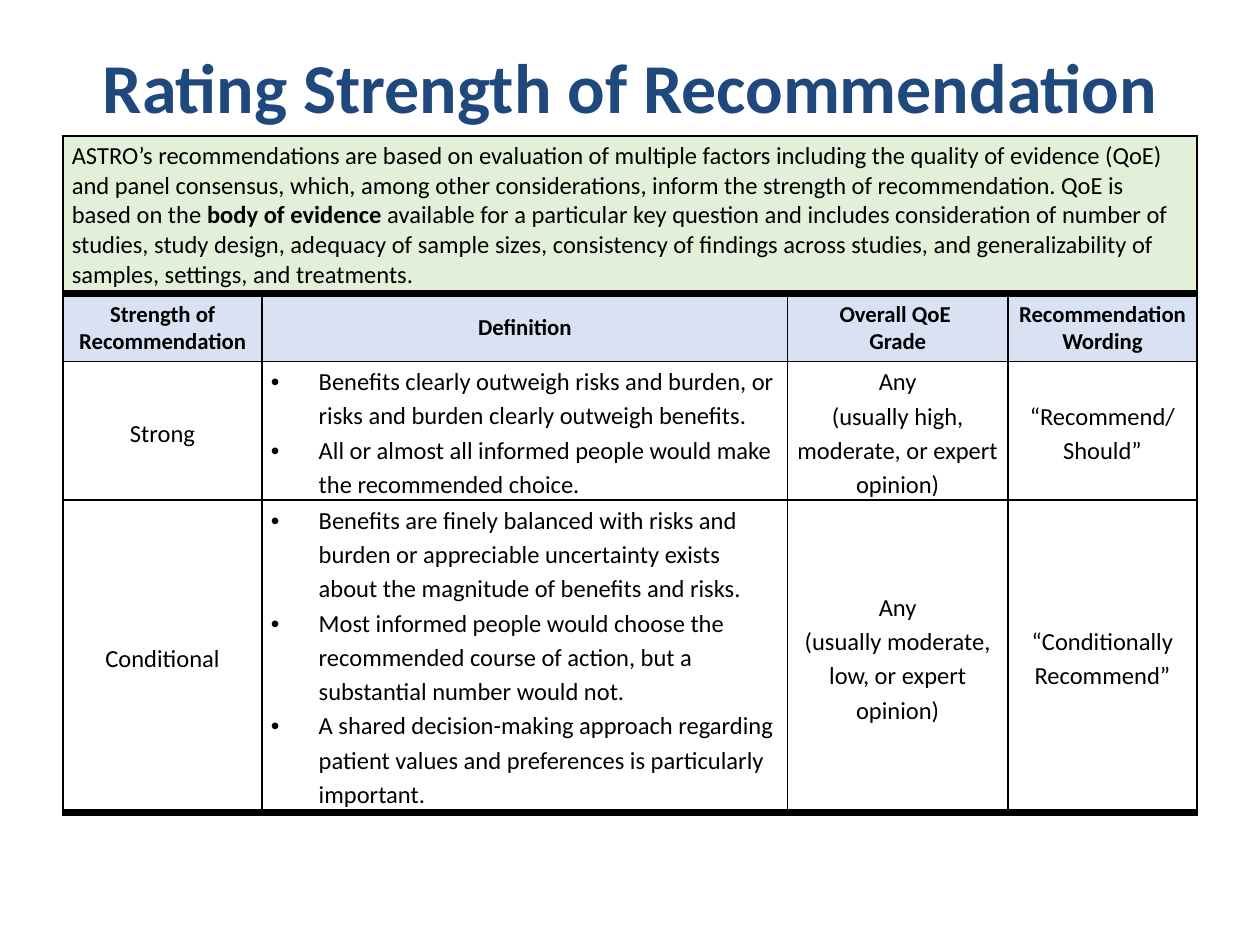
from lxml.etree import SubElement
from pptx import Presentation
from pptx.dml.color import RGBColor
from pptx.enum.text import MSO_ANCHOR, PP_ALIGN
from pptx.oxml import parse_xml
from pptx.oxml.ns import nsdecls, qn
from pptx.util import Emu, Inches, Pt

FONT = "Calibri"
BLACK, NAVY, GREEN, BLUE = "000000", "1F497D", "E2EFD9", "D9E2F3"
THIN, THICK = 1, 4.5

COLUMN_WIDTHS = [1.58, 4.17, 1.75, 1.5]
ROW_HEIGHTS = [1.25, 0.54, 1.1, 2.48]
RULE_WIDTHS = [THIN, THICK, THIN, THIN, THICK]

INTRO = (
    "ASTRO’s recommendations are based on evaluation of multiple factors including the "
    "quality of evidence (QoE) and panel consensus, which, among other considerations, "
    "inform the strength of recommendation. QoE is based on the **body of evidence** "
    "available for a particular key question and includes consideration of number of "
    "studies, study design, adequacy of sample sizes, consistency of findings across "
    "studies, and generalizability of samples, settings, and treatments."
)
HEADINGS = [
    ["Strength of Recommendation"],
    ["Definition"],
    ["Overall QoE ", "Grade"],
    ["Recommendation Wording"],
]
RATINGS = [
    [
        ["Strong"],
        [
            "Benefits clearly outweigh risks and burden, or risks and burden clearly "
            "outweigh benefits.",
            "All or almost all informed people would make the recommended choice.",
        ],
        ["Any", "(usually high, moderate, or expert opinion)"],
        ["“Recommend/ Should”"],
    ],
    [
        ["Conditional"],
        [
            "Benefits are finely balanced with risks and burden or appreciable "
            "uncertainty exists about the magnitude of benefits and risks.",
            "Most informed people would choose the recommended course of action, but a "
            "substantial number would not.",
            "A shared decision-making approach regarding patient values and preferences "
            "is particularly important.",
        ],
        ["Any", "(usually moderate, low, or expert opinion)"],
        ["“Conditionally Recommend”"],
    ],
]


def rgb(color):
    return RGBColor.from_string(color)


def add_bullet(paragraph, indent=0.38, tab=0.5):
    props = paragraph._p.get_or_add_pPr()
    props.set("marL", str(Inches(indent)))
    props.set("indent", str(-Inches(indent)))
    SubElement(props, qn("a:buFont"), typeface="Arial")
    SubElement(props, qn("a:buChar"), char="•")
    tabs = SubElement(props, qn("a:tabLst"))
    SubElement(tabs, qn("a:tab"), pos=str(Inches(tab)), algn="l")


def write(frame, lines, size=14, color=BLACK, bold=False, align=PP_ALIGN.CENTER,
          spacing=None, bullets=False):
    """Fill a text frame with one paragraph per line; **marks** toggle bold."""
    frame.word_wrap = True
    for index, line in enumerate(lines):
        paragraph = frame.add_paragraph() if index else frame.paragraphs[0]
        if bullets:
            add_bullet(paragraph)
        paragraph.alignment = align
        if spacing:
            paragraph.line_spacing = spacing
        for part, words in enumerate(line.split("**")):
            run = paragraph.add_run()
            run.text = words
            run.font.name = FONT
            run.font.size = Pt(size)
            run.font.bold = bold or part % 2 == 1
            run.font.color.rgb = rgb(color)


def set_borders(cell, top, bottom):
    props = cell._tc.get_or_add_tcPr()
    sides = {"L": THIN, "R": THIN, "T": top, "B": bottom}
    for index, (side, width) in enumerate(sides.items()):
        props.insert(index, parse_xml(
            f'<a:ln{side} {nsdecls("a")} w="{Pt(width)}"><a:solidFill>'
            f'<a:srgbClr val="{BLACK}"/></a:solidFill></a:ln{side}>'))


def style_cell(cell, row):
    cell.margin_left = cell.margin_right = Inches(0.07)
    cell.margin_top, cell.margin_bottom = Inches(0.01), 0
    cell.vertical_anchor = MSO_ANCHOR.MIDDLE
    if row < 2:
        cell.fill.solid()
        cell.fill.fore_color.rgb = rgb((GREEN, BLUE)[row])
    else:
        cell.fill.background()
    set_borders(cell, RULE_WIDTHS[row], RULE_WIDTHS[row + 1])


def add_title(slide, left, top, width, height):
    box = slide.shapes.add_textbox(left, top, width, height)
    write(box.text_frame, ["Rating Strength of Recommendation"],
          size=40, color=NAVY, bold=True)


def add_ratings_table(slide, left, top, width, height):
    table = slide.shapes.add_table(
        len(ROW_HEIGHTS), len(COLUMN_WIDTHS), left, top, width, height).table
    table.first_row = table.horz_banding = False
    for column, share in zip(table.columns, COLUMN_WIDTHS):
        column.width = Emu(int(width * share / sum(COLUMN_WIDTHS)))
    for row, share in zip(table.rows, ROW_HEIGHTS):
        row.height = Emu(int(height * share / sum(ROW_HEIGHTS)))

    for row in range(len(ROW_HEIGHTS)):
        for column in range(len(COLUMN_WIDTHS)):
            style_cell(table.cell(row, column), row)

    intro = table.cell(0, 0)
    intro.merge(table.cell(0, len(COLUMN_WIDTHS) - 1))
    write(intro.text_frame, [INTRO], align=PP_ALIGN.LEFT)
    for column, heading in enumerate(HEADINGS):
        write(table.cell(1, column).text_frame, heading, size=13, bold=True)
    for row, rating in enumerate(RATINGS, start=2):
        for column, lines in enumerate(rating):
            cell = table.cell(row, column)
            is_definition = column == 1
            if is_definition:
                cell.vertical_anchor = MSO_ANCHOR.TOP
            write(cell.text_frame, lines, spacing=1.15, bullets=is_definition,
                  align=PP_ALIGN.LEFT if is_definition else PP_ALIGN.CENTER)


def main():
    deck = Presentation()
    deck.slide_width, deck.slide_height = Inches(10), Inches(7.5)
    slide = deck.slides.add_slide(deck.slide_layouts[6])
    margin = int(deck.slide_width * 0.05)
    content_width = deck.slide_width - 2 * margin
    add_title(slide, margin, Inches(0.3), content_width, Inches(1.25))
    add_ratings_table(slide, margin, Inches(1.08), content_width,
                      Inches(sum(ROW_HEIGHTS)))
    deck.save("out.pptx")


if __name__ == "__main__":
    main()
